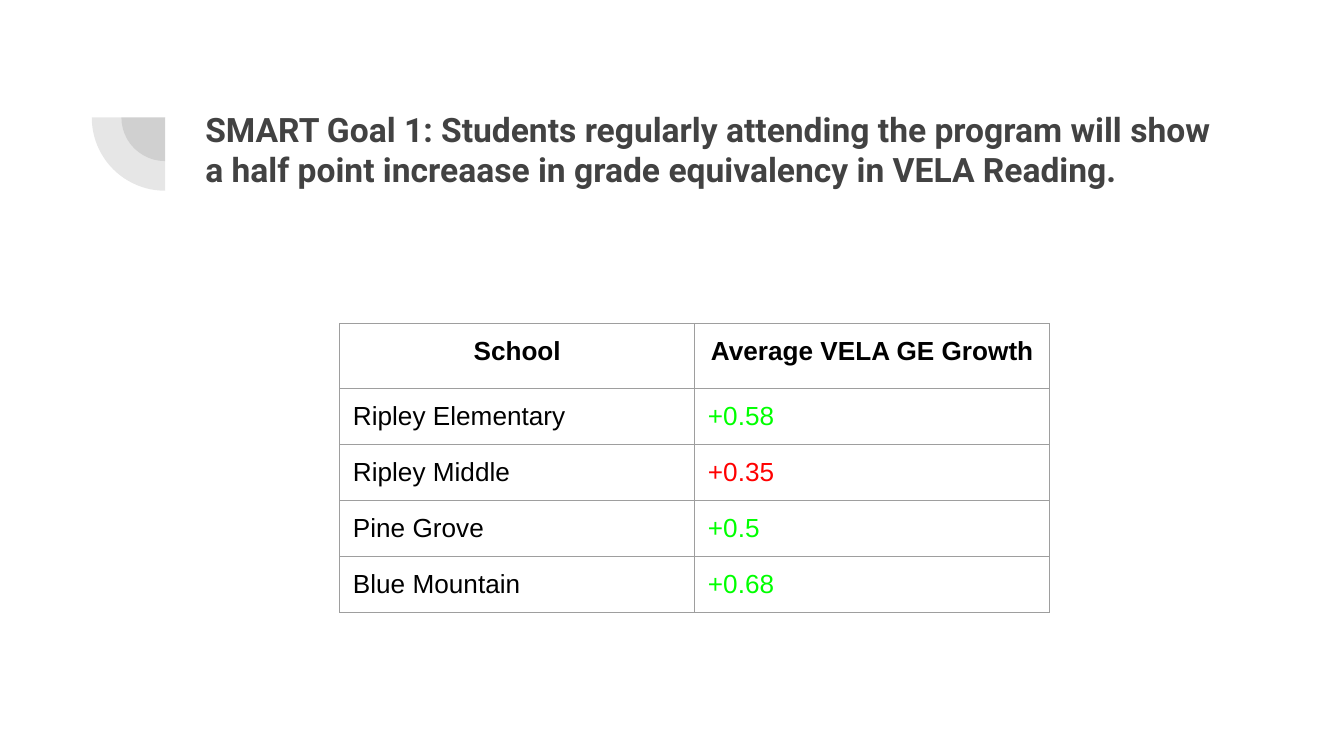
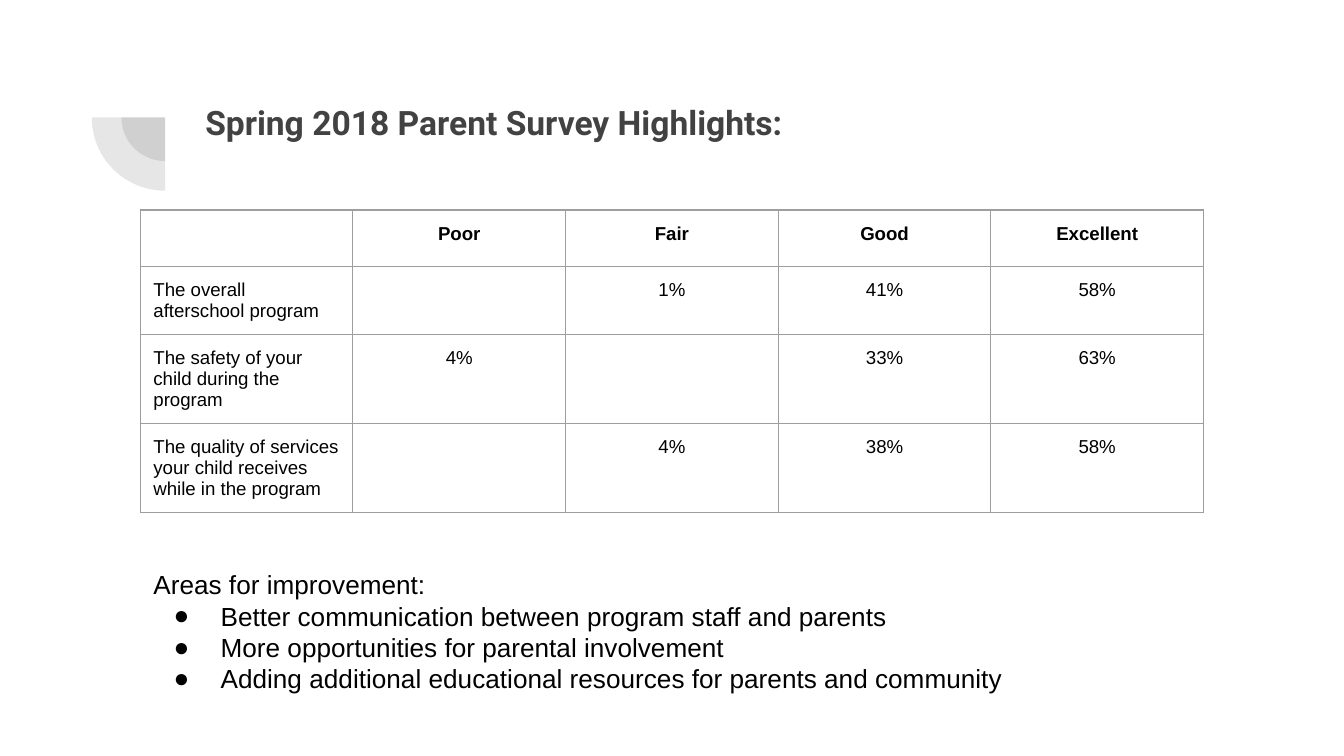
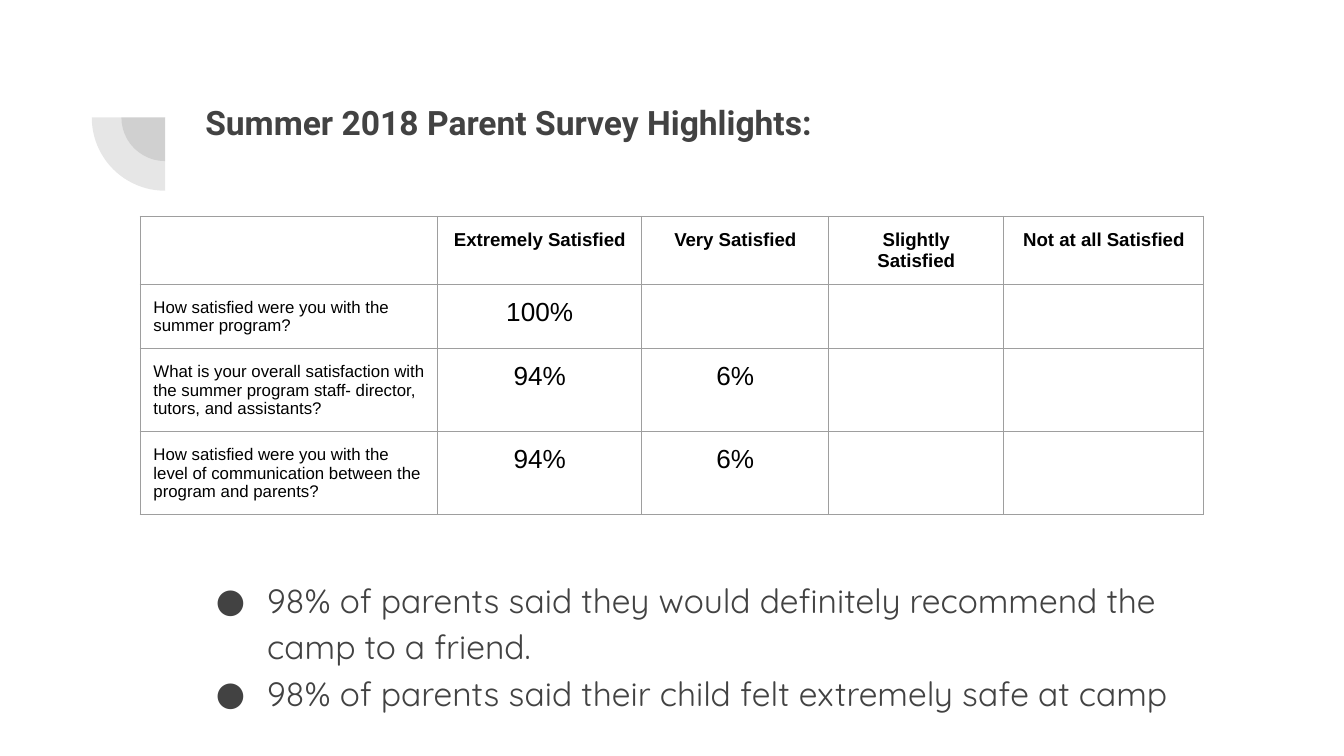
from lxml import etree
from pptx import Presentation
from pptx import util as u
from pptx.dml.color import RGBColor
from pptx.enum import shapes, text
from pptx.oxml.ns import qn

COLORS = {
    "title": "424242",
    "ink": "000000",
    "grid": "9E9E9E",
    "met": "00FF00",
    "missed": "FF0000",
    "paper": "FFFFFF",
}
INSET = u.Cm(0.25)
INSETS = {f"margin_{side}": INSET for side in ("left", "top", "right", "bottom")}
FRAME = {
    **INSETS,
    "word_wrap": True,
    "auto_size": text.MSO_AUTO_SIZE.NONE,
    "vertical_anchor": text.MSO_ANCHOR.TOP,
}
TITLE = {"name": "Roboto", "size": u.Pt(18), "bold": True}
BODY = {"name": "Arial", "size": u.Pt(14), "bold": False}
CAMP = {"name": "Quicksand", "size": u.Pt(18), "bold": False}
CENTER = text.PP_ALIGN.CENTER
LEFT = text.PP_ALIGN.LEFT
GOAL = 0.5


def apply(target, values):
    """Set every attribute in values on target."""
    for name, value in values.items():
        setattr(target, name, value)


def rgb(name):
    """Return the named colour."""
    return RGBColor.from_string(COLORS[name])


def write(paragraph, words, font, color="ink"):
    """Add words to a paragraph in the given font and colour."""
    run = paragraph.add_run()
    run.text = words
    apply(run.font, font)
    run.font.color.rgb = rgb(color)


def add_frame(slide, left, top, width, height):
    """Add a wrapping text box and return its text frame."""
    frame = slide.shapes.add_textbox(*map(u.Cm, (left, top, width, height))).text_frame
    apply(frame, FRAME)
    return frame


def add_wedge(slide, diameter):
    """Draw a translucent quarter circle around the corner beside the title."""
    left, top = 3.12 - diameter / 2, 2.22 - diameter / 2
    wedge = slide.shapes.add_shape(
        shapes.MSO_SHAPE.PIE, *map(u.Cm, (left, top, diameter, diameter)))
    wedge.rotation = 270
    wedge.adjustments[0], wedge.adjustments[1] = 108, 162
    wedge.shadow.inherit = False
    wedge.line.fill.background()
    wedge.fill.solid()
    wedge.fill.fore_color.rgb = rgb("title")
    tint = wedge.fill._xPr.find(f".//{qn('a:srgbClr')}")
    etree.SubElement(tint, qn("a:alpha"), val="13000")


def add_titled_slide(deck, title, top=1.67):
    """Add a slide with the corner wedges and a title."""
    slide = deck.slides.add_slide(deck.slide_layouts[6])
    slide.background.fill.solid()
    slide.background.fill.fore_color.rgb = rgb("paper")
    for diameter in (1.65, 2.77):
        add_wedge(slide, diameter)
    frame = add_frame(slide, 3.63, top, 19.53, 2.77)
    write(frame.paragraphs[0], title, TITLE, "title")
    return slide


def add_borders(cell):
    """Draw a thin grey line on all sides of a cell."""
    properties = cell._tc.get_or_add_tcPr()
    for side in "LRTB":
        line = etree.SubElement(properties, qn(f"a:ln{side}"), w=str(u.Pt(0.75)))
        fill = etree.SubElement(line, qn("a:solidFill"))
        etree.SubElement(fill, qn("a:srgbClr"), val=COLORS["grid"])


def fill_cell(cell, words, size, bold, align, color):
    """Format a cell and write its words."""
    apply(cell, INSETS)
    add_borders(cell)
    cell.fill.background()
    paragraph = cell.text_frame.paragraphs[0]
    paragraph.alignment = align
    if words:
        write(paragraph, words, {**BODY, "size": u.Pt(size), "bold": bold}, color)
    else:
        paragraph._p.get_or_add_endParaRPr().set("sz", str(size * 100))


def growth_color(growth):
    """Tell by colour whether a growth value meets the goal."""
    return "met" if float(growth) >= GOAL else "missed"


def add_results(slide, left, top, widths, heights, rows, sizes,
                value_align=CENTER, value_color=lambda value: "ink"):
    """Add a table; sizes are for the header, the labels and the values."""
    head_size, label_size, value_size = sizes
    table = slide.shapes.add_table(
        len(rows), len(widths),
        *map(u.Cm, (left, top, sum(widths), sum(heights)))).table
    apply(table, {"first_row": False, "horz_banding": False})
    for column, width in zip(table.columns, widths):
        column.width = u.Cm(width)
    for row, height in zip(table.rows, heights):
        row.height = u.Cm(height)
    for r, row in enumerate(rows):
        for c, words in enumerate(row):
            if r == 0:
                look = (head_size, True, CENTER, "ink")
            elif c == 0:
                look = (label_size, False, LEFT, "ink")
            else:
                color = value_color(words) if words else "ink"
                look = (value_size, False, value_align, color)
            fill_cell(table.cell(r, c), words, *look)


def add_bullet(paragraph, words, font, color, hang):
    """Write a paragraph with a round bullet and a hanging indent."""
    properties = paragraph._p.get_or_add_pPr()
    properties.set("marL", str(u.Cm(1.27)))
    properties.set("indent", str(-u.Cm(hang)))
    tint = etree.SubElement(properties, qn("a:buClr"))
    etree.SubElement(tint, qn("a:srgbClr"), val=COLORS[color])
    etree.SubElement(properties, qn("a:buFont"), typeface=font["name"])
    etree.SubElement(properties, qn("a:buChar"), char="●")
    write(paragraph, words, font, color)


def add_goal_slide(deck):
    """Show reading growth by school."""
    slide = add_titled_slide(
        deck,
        "SMART Goal 1: Students regularly attending the program will show "
        "a half point increaase in grade equivalency in VELA Reading.",
        top=1.81)
    growth = [
        ("School", "Average VELA GE Growth"),
        ("Ripley Elementary", "+0.58"),
        ("Ripley Middle", "+0.35"),
        ("Pine Grove", "+0.5"),
        ("Blue Mountain", "+0.68"),
    ]
    add_results(slide, 6.42, 6.12, [6.71] * 2, [1.22] + [1.06] * 4, growth,
                (14, 14, 14), LEFT, growth_color)


def add_spring_slide(deck):
    """Show the spring survey and the areas for improvement."""
    slide = add_titled_slide(deck, "Spring 2018 Parent Survey Highlights:")
    ratings = [
        ("", "Poor", "Fair", "Good", "Excellent"),
        ("The overall afterschool program", "", "1%", "41%", "58%"),
        ("The safety of your child during the program", "4%", "", "33%", "63%"),
        ("The quality of services your child receives while in the program",
         "", "4%", "38%", "58%"),
    ]
    add_results(slide, 2.65, 3.97, [4.02] * 5, [1.06] * 4, ratings, (10, 10, 10))
    areas = add_frame(slide, 2.65, 10.5, 20.5, 2.95)
    write(areas.paragraphs[0], "Areas for improvement:", BODY)
    for area in (
        "Better communication between program staff and parents",
        "More opportunities for parental involvement",
        "Adding additional educational resources for parents and community",
    ):
        add_bullet(areas.add_paragraph(), area, BODY, "ink", 0.89)


def add_summer_slide(deck):
    """Show the summer survey and what parents said."""
    slide = add_titled_slide(deck, "Summer 2018 Parent Survey Highlights:")
    satisfaction = [
        ("", "Extremely Satisfied", "Very Satisfied", "Slightly Satisfied",
         "Not at all Satisfied"),
        ("How satisfied were you with the summer program?", "100%", "", "", ""),
        ("What is your overall satisfaction with the summer program staff- "
         "director, tutors, and assistants?", "94%", "6%", "", ""),
        ("How satisfied were you with the level of communication between the "
         "program and parents?", "94%", "6%", "", ""),
    ]
    add_results(slide, 2.65, 4.09, [5.62, 3.86, 3.53, 3.31, 3.78],
                [0.74] + [1.07] * 3, satisfaction, (10, 9, 14))
    opinions = add_frame(slide, 3.53, 10.6, 19.71, 2.26)
    for i, opinion in enumerate((
        "98% of parents said they would definitely recommend the camp to a friend.",
        "98% of parents said their child felt extremely safe at camp",
    )):
        paragraph = opinions.add_paragraph() if i else opinions.paragraphs[0]
        paragraph.line_spacing = 1.15
        add_bullet(paragraph, opinion, CAMP, "title", 0.97)


def main():
    """Build and save the three slides."""
    deck = Presentation()
    apply(deck, {"slide_width": u.Cm(25.4), "slide_height": u.Cm(14.29)})
    add_goal_slide(deck)
    add_spring_slide(deck)
    add_summer_slide(deck)
    deck.save("out.pptx")


if __name__ == "__main__":
    main()
